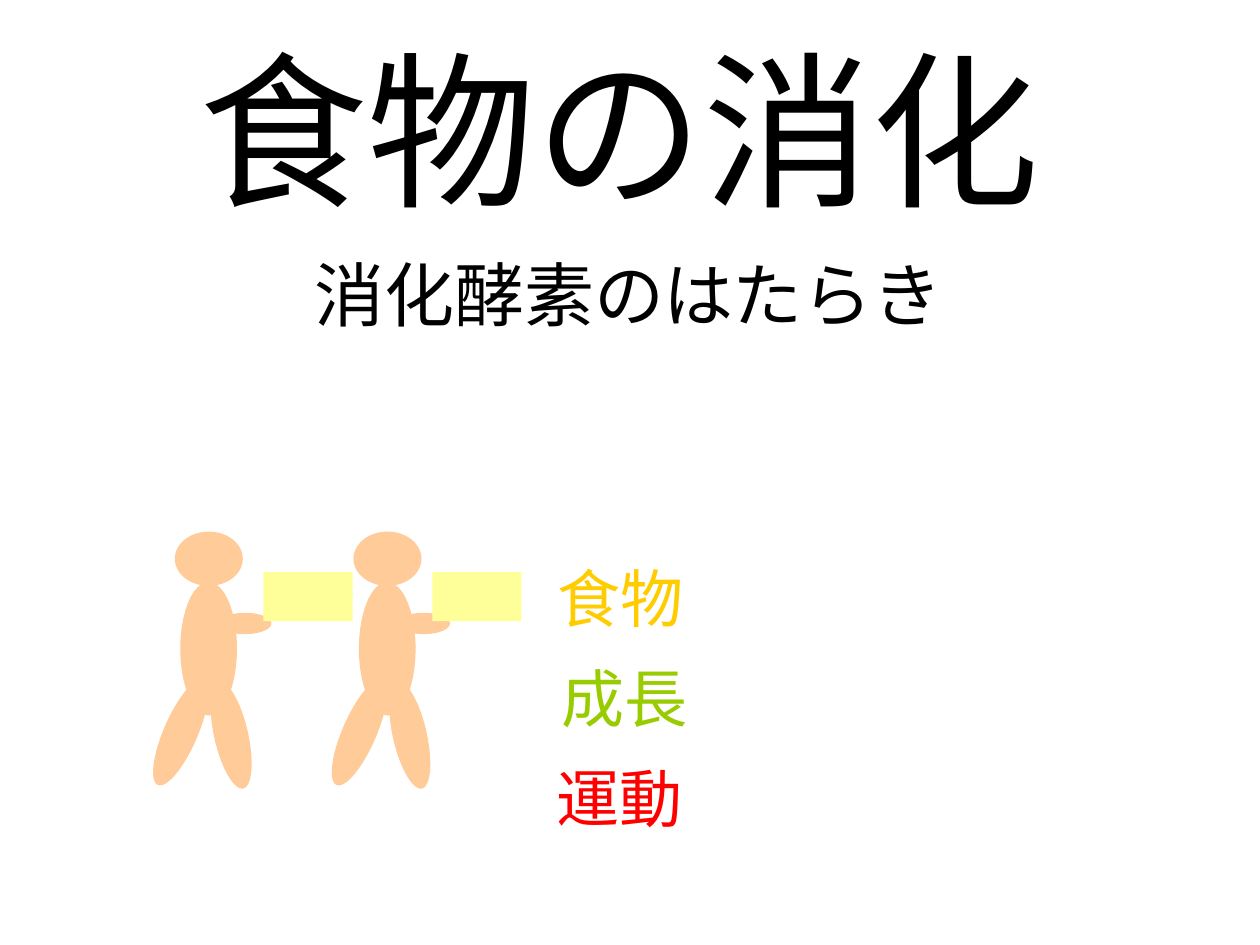
from pptx import Presentation
from pptx.dml.color import RGBColor
from pptx.enum.shapes import MSO_SHAPE
from pptx.enum.text import MSO_ANCHOR, MSO_AUTO_SIZE, PP_ALIGN
from pptx.oxml.ns import qn
from pptx.util import Pt
from lxml.etree import SubElement

SKIN, PACK, INK = "FFCC99", "FFFF99", "000000"


def color(code):
    return RGBColor.from_string(code)


def apply(item, values):
    for name, value in values.items():
        setattr(item, name, value)


class Page:
    sans, gothic = "Arial", "Noto Sans CJK JP"

    def __init__(self, deck):
        self.slide = deck.slides.add_slide(deck.slide_layouts[5])

    def letter(self, shape, text, size, font, hue, frame):
        body = shape.text_frame
        apply(body, {"auto_size": MSO_AUTO_SIZE.NONE, **frame})
        para = body.paragraphs[0]
        para.alignment = PP_ALIGN.CENTER
        run = para.add_run()
        run.text = text
        apply(run.font, {"size": Pt(size), "name": font})
        run.font.color.rgb = color(hue)
        # Japanese letters take the East Asian font
        SubElement(run.font._element, qn("a:ea"), typeface=font)
        return para

    def title(self, text, box, size):
        shape = self.slide.shapes.title
        apply(shape, dict(zip(("left", "top", "width", "height"), map(Pt, box))))
        self.letter(shape, text, size, self.sans, INK,
                    {"word_wrap": True, "vertical_anchor": MSO_ANCHOR.MIDDLE})

    def subtitle(self, text, box, size):
        shape = self.slide.shapes.add_textbox(*map(Pt, box))
        para = self.letter(shape, text, size, self.sans, INK, {"word_wrap": True})
        para.line_spacing = 0.9

    def label(self, text, box, size, hue):
        shape = self.slide.shapes.add_textbox(*map(Pt, box))
        self.letter(shape, text, size, self.gothic, hue,
                    {"word_wrap": False, "margin_top": 0, "margin_bottom": 0})

    def shape(self, kind, box, hue, turn=0, group=None):
        home = group or self.slide
        shape = home.shapes.add_shape(kind, *map(Pt, box))
        shape.rotation = turn
        shape.shadow.inherit = False
        shape.fill.solid()
        shape.fill.fore_color.rgb = color(hue)
        shape.line.fill.background()

    def person(self, left, top):
        group = self.slide.shapes.add_group_shape()
        parts = [
            (9.4, 28.8, 32.4, 76.3, 0),       # body
            (0, 82, 19.4, 65.5, 23.5),        # back leg
            (28.8, 85, 19.4, 62.6, 347.2),    # front leg
            (6.3, 0, 38.9, 31, 0),            # head
            (40.3, 37.4, 12.2, 30.2, 90),     # arm
        ]
        for x, y, wide, high, turn in parts:
            self.shape(MSO_SHAPE.OVAL, (left + x, top + y, wide, high),
                       SKIN, turn, group)


def main():
    deck = Presentation()
    apply(deck, {"slide_width": Pt(720), "slide_height": Pt(540)})
    page = Page(deck)

    # Headings
    page.title("食物の消化", (48, 15, 612, 116), 96)
    page.subtitle("消化酵素のはたらき", (145, 145.5, 428, 55), 40)

    # Two people carrying packs
    for left, pack in ((93.6, 150.5), (195.7, 247)):
        page.person(left, 303.8)
        page.shape(MSO_SHAPE.RECTANGLE, (pack, 327, 51, 28), PACK)

    # Labels at equal steps
    labels = [("食物", 103, "FFCC00"), ("成長", 108, "99CC00"), ("運動", 102, "FF0000")]
    for row, (text, wide, hue) in enumerate(labels):
        page.label(text, (303, 320 + 57 * row, wide, 36), 36, hue)

    deck.save("out.pptx")


if __name__ == "__main__":
    main()
